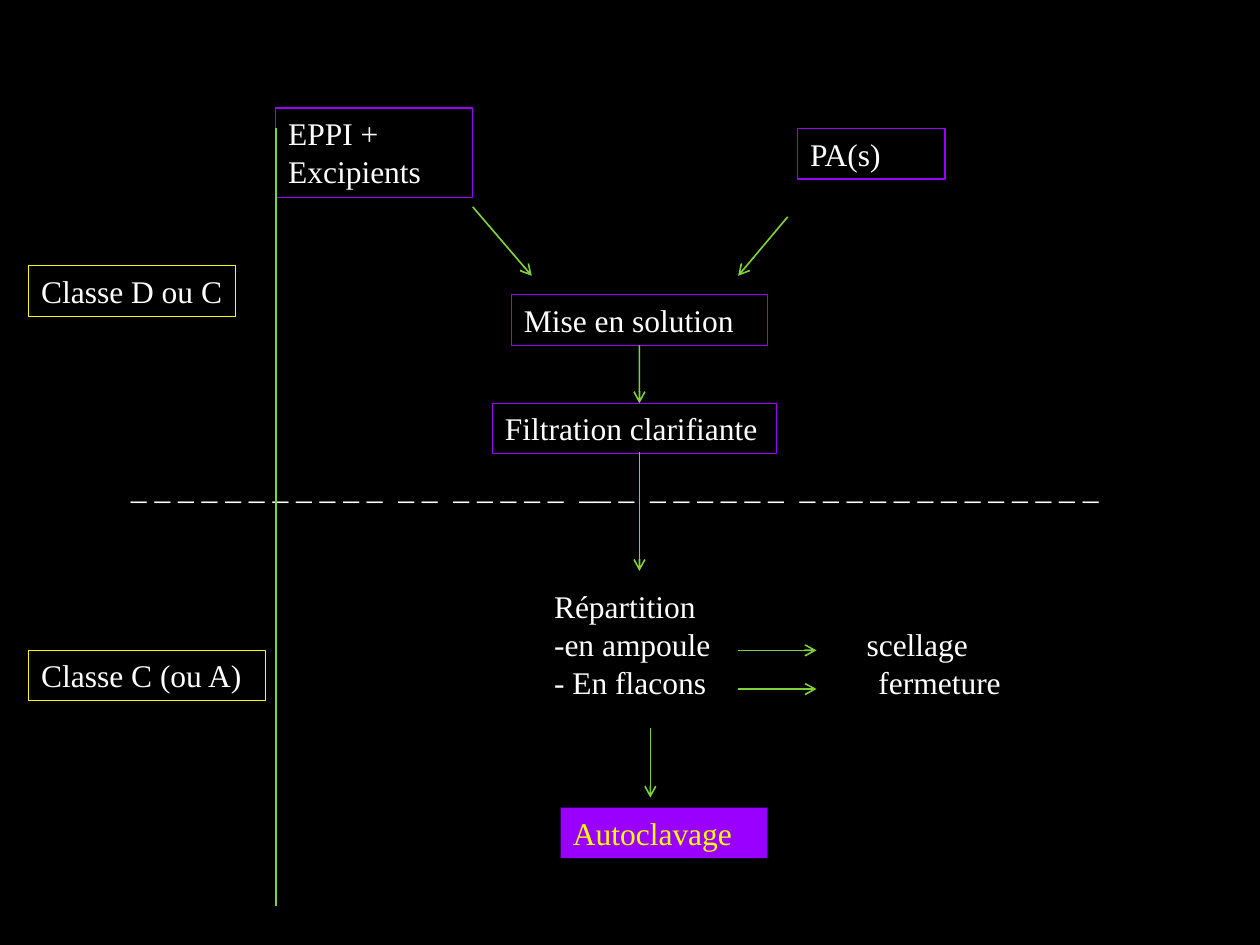
from lxml import etree
from pptx import Presentation
from pptx.dml.color import RGBColor
from pptx.enum.shapes import MSO_CONNECTOR as Connector, MSO_SHAPE as Shape
from pptx.enum.text import MSO_ANCHOR as Anchor, MSO_AUTO_SIZE as AutoSize, PP_ALIGN as Align
from pptx.oxml.ns import qn
from pptx.util import Cm, Pt

BLACK = RGBColor(0x00, 0x00, 0x00)
WHITE = RGBColor(0xFF, 0xFF, 0xFF)
PURPLE = RGBColor(0x99, 0x00, 0xFF)
YELLOW = RGBColor(0xFF, 0xFF, 0x00)
GREEN = RGBColor(0x7F, 0xD1, 0x3B)
ROW = 1.02
FONT = {"name": "Times New Roman", "size": Pt(18)}
FRAME = {"word_wrap": True, "vertical_anchor": Anchor.TOP, "auto_size": AutoSize.SHAPE_TO_FIT_TEXT}
DASHES = "_ _ _ _ _ _ _ _ _ _ _  _ _  _ _ _ _ _  __ _  _ _ _ _ _ _  _ _ _ _ _ _ _ _ _ _ _ _ _"


def set_format(target, values):
    """Set every attribute of a dict of format values."""
    for name, value in values.items():
        setattr(target, name, value)


def write_text(shape, lines, color=WHITE):
    """Write one paragraph per line."""
    frame = shape.text_frame
    frame.text = "\n".join(lines)
    set_format(frame, FRAME)
    for paragraph in frame.paragraphs:
        paragraph.alignment = Align.LEFT
        for run in paragraph.runs:
            set_format(run.font, FONT)
            run.font.color.rgb = color


def add_text(slide, box, x, y, width, lines, height=ROW):
    """Place plain text relative to the box."""
    left, top = box
    shape = slide.shapes.add_textbox(Cm(left + x), Cm(top + y), Cm(width), Cm(height))
    write_text(shape, lines)
    return shape


def add_step(slide, box, x, y, width, text, outline=None, fill=None, color=WHITE, height=ROW):
    """Place a labelled rectangle relative to the box."""
    left, top = box
    shape = slide.shapes.add_shape(Shape.RECTANGLE, Cm(left + x), Cm(top + y), Cm(width), Cm(height))
    shape.shadow.inherit = False
    if fill is None:
        shape.fill.background()
    else:
        shape.fill.solid()
        shape.fill.fore_color.rgb = fill
    if outline is None:
        shape.line.fill.background()
    else:
        shape.line.color.rgb = outline
        shape.line.width = Pt(0.75)
    write_text(shape, [text], color)
    return shape


def add_line(slide, box, start, end, arrow=True):
    """Draw a green line between two points relative to the box."""
    left, top = box
    line = slide.shapes.add_connector(
        Connector.STRAIGHT,
        Cm(left + start[0]), Cm(top + start[1]), Cm(left + end[0]), Cm(top + end[1]))
    line.line.color.rgb = GREEN
    line.line.width = Pt(0.94)
    if arrow:
        etree.SubElement(line.line._get_or_add_ln(), qn("a:tailEnd"), type="arrow")
    etree.SubElement(line._element.spPr, qn("a:effectLst"))
    return line


def add_tab(paragraph, position):
    """Give the paragraph one left tab stop."""
    tabs = etree.SubElement(paragraph._p.get_or_add_pPr(), qn("a:tabLst"))
    etree.SubElement(tabs, qn("a:tab"), pos=str(Cm(position)), algn="l")


def add_preparation(slide, box):
    """Place the steps from raw materials to filtration."""
    add_step(slide, box, 0, 0, 3.96, "EPPI + Excipients", PURPLE, height=1.8)
    add_step(slide, box, 10.52, 0.41, 2.97, "PA(s)", PURPLE)
    solution = add_step(slide, box, 4.75, 3.76, 5.16, "Mise en solution", PURPLE)
    filtration = add_step(slide, box, 4.37, 5.95, 5.72, "Filtration clarifiante", PURPLE)
    filtration.text_frame.word_wrap = False
    add_line(slide, box, (3.97, 1.99), (5.16, 3.38))
    add_line(slide, box, (10.32, 2.19), (9.32, 3.38))
    add_line(slide, box, (7.33, 4.78), (7.33, 5.95)).begin_connect(solution, 2)
    add_line(slide, box, (7.33, 6.94), (7.33, 9.33))


def add_distribution(slide, box):
    """Place the filling options and the final autoclave step."""
    lines = ["Répartition", "-en ampoule\tscellage", "- En flacons\tfermeture"]
    options = add_text(slide, box, 0, 0, 11.51, lines, 2.57)
    for paragraph, tab in zip(options.text_frame.paragraphs[1:], (6.3, 6.54)):
        add_tab(paragraph, tab)
    for y in (1.4, 2.18):
        add_line(slide, box, (3.96, y), (5.54, y))
    add_line(slide, box, (2.19, 2.97), (2.19, 4.37))
    add_step(slide, box, 0.38, 4.57, 4.17, "Autoclavage", fill=PURPLE, color=YELLOW)


def add_zones(slide, box):
    """Place the cleanroom classes and the lines that part them."""
    add_text(slide, box, 1.81, 6.73, 21.03, [DASHES])
    add_line(slide, box, (4.98, 0), (4.98, 15.67), arrow=False)
    add_step(slide, box, 0, 2.77, 4.17, "Classe D ou C", YELLOW)
    add_step(slide, box, 0, 10.52, 4.78, "Classe C (ou A)", YELLOW)


def main():
    """Build the slide and save it."""
    presentation = Presentation()
    set_format(presentation, {"slide_width": Cm(25.4), "slide_height": Cm(19.05)})
    slide = presentation.slides.add_slide(presentation.slide_layouts[6])
    slide.background.fill.solid()
    slide.background.fill.fore_color.rgb = BLACK
    add_preparation(slide, (5.56, 2.18))
    add_distribution(slide, (10.92, 11.71))
    add_zones(slide, (0.58, 2.59))
    presentation.save("out.pptx")


if __name__ == "__main__":
    main()
